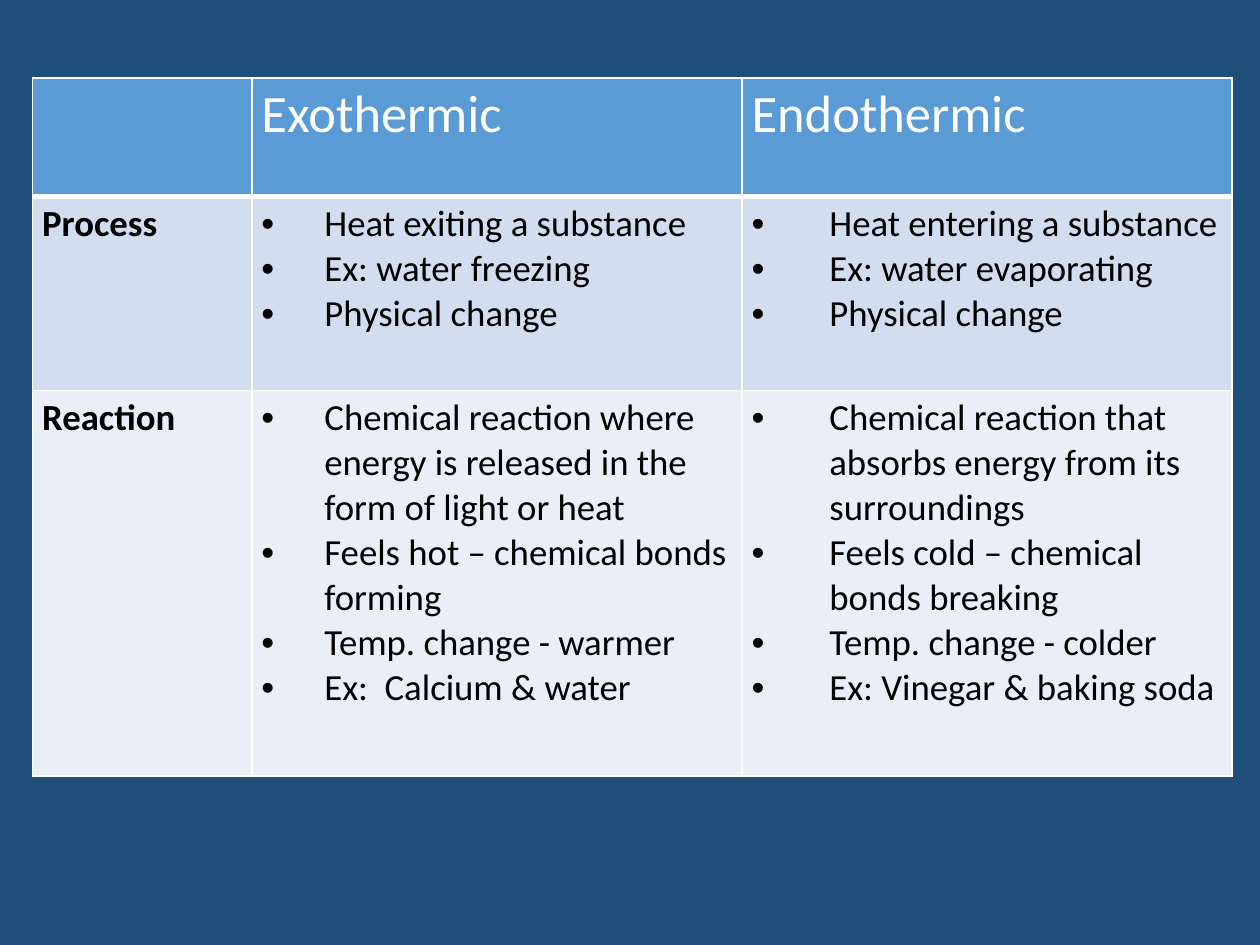
"""Build a slide with a table comparing exothermic and endothermic changes."""
from lxml.etree import SubElement
from pptx import Presentation
from pptx.dml.color import RGBColor as RGB
from pptx.oxml.ns import qn
from pptx.util import Cm, Pt

ROWS = [
    ("", ["Exothermic"], ["Endothermic"]),
    ("Process",
     ["Heat exiting a substance", "Ex: water freezing", "Physical change"],
     ["Heat entering a substance", "Ex: water evaporating", "Physical change"]),
    ("Reaction",
     ["Chemical reaction where energy is released in the form of light or heat",
      "Feels hot – chemical bonds forming",
      "Temp. change - warmer",
      "Ex:  Calcium & water"],
     ["Chemical reaction that absorbs energy from its surroundings",
      "Feels cold – chemical bonds breaking",
      "Temp. change - colder",
      "Ex: Vinegar & baking soda"]),
]
COLORS = {"bg": "1F4E79", "line": "FFFFFF", "head_text": "FFFFFF", "text": "000000"}
ROW_FILLS = ["5B9BD5", "D2DEEF", "EAEFF7"]
LEFT, TOP = 0.66, 1.57
COL_WIDTHS = [4.42, 9.88, 9.88]
ROW_HEIGHTS = [2.39, 3.91, 7.77]
INDENTS = [0, 1.27, 1.57]
FONT = "Calibri"


def set_borders(cell, bottom):
    tc_pr = cell._tc.get_or_add_tcPr()
    for side, width in (("L", 1), ("R", 1), ("T", 1), ("B", bottom)):
        ln = SubElement(tc_pr, qn(f"a:ln{side}"), w=str(Pt(width)))
        fill = SubElement(ln, qn("a:solidFill"))
        SubElement(fill, qn("a:srgbClr"), val=COLORS["line"])


def add_bullet(p, indent):
    p_pr = p._p.get_or_add_pPr()
    p_pr.set("marL", str(Cm(indent)))
    p_pr.set("indent", str(-Cm(indent)))
    SubElement(p_pr, qn("a:buFont"), typeface="Arial")
    SubElement(p_pr, qn("a:buChar"), char="•")


def fill_cell(cell, lines, row, col):
    is_head = row == 0
    set_borders(cell, 3 if is_head else 1)
    cell.fill.solid()
    cell.fill.fore_color.rgb = RGB.from_string(ROW_FILLS[row])
    cell.margin_left = cell.margin_right = Cm(0.19)
    cell.margin_top = cell.margin_bottom = Cm(0.1)
    tf = cell.text_frame
    tf.text = "\n".join(lines)
    for p in tf.paragraphs:
        if col and not is_head:
            add_bullet(p, INDENTS[col])
        for r in p.runs:
            r.font.name = FONT
            r.font.size = Pt(30 if is_head else 21)
            r.font.bold = col == 0
            r.font.color.rgb = RGB.from_string(COLORS["head_text" if is_head else "text"])


def main():
    prs = Presentation()
    prs.slide_width, prs.slide_height = Cm(25.4), Cm(19.05)
    s = prs.slides.add_slide(prs.slide_layouts[6])
    s.background.fill.solid()
    s.background.fill.fore_color.rgb = RGB.from_string(COLORS["bg"])

    table = s.shapes.add_table(
        len(ROWS), len(COL_WIDTHS), Cm(LEFT), Cm(TOP),
        Cm(sum(COL_WIDTHS)), Cm(sum(ROW_HEIGHTS))).table
    for column, width in zip(table.columns, COL_WIDTHS):
        column.width = Cm(width)
    for i, (label, *details) in enumerate(ROWS):
        table.rows[i].height = Cm(ROW_HEIGHTS[i])
        for j, lines in enumerate([[label], *details]):
            fill_cell(table.cell(i, j), lines, i, j)
    prs.save("out.pptx")


if __name__ == "__main__":
    main()
